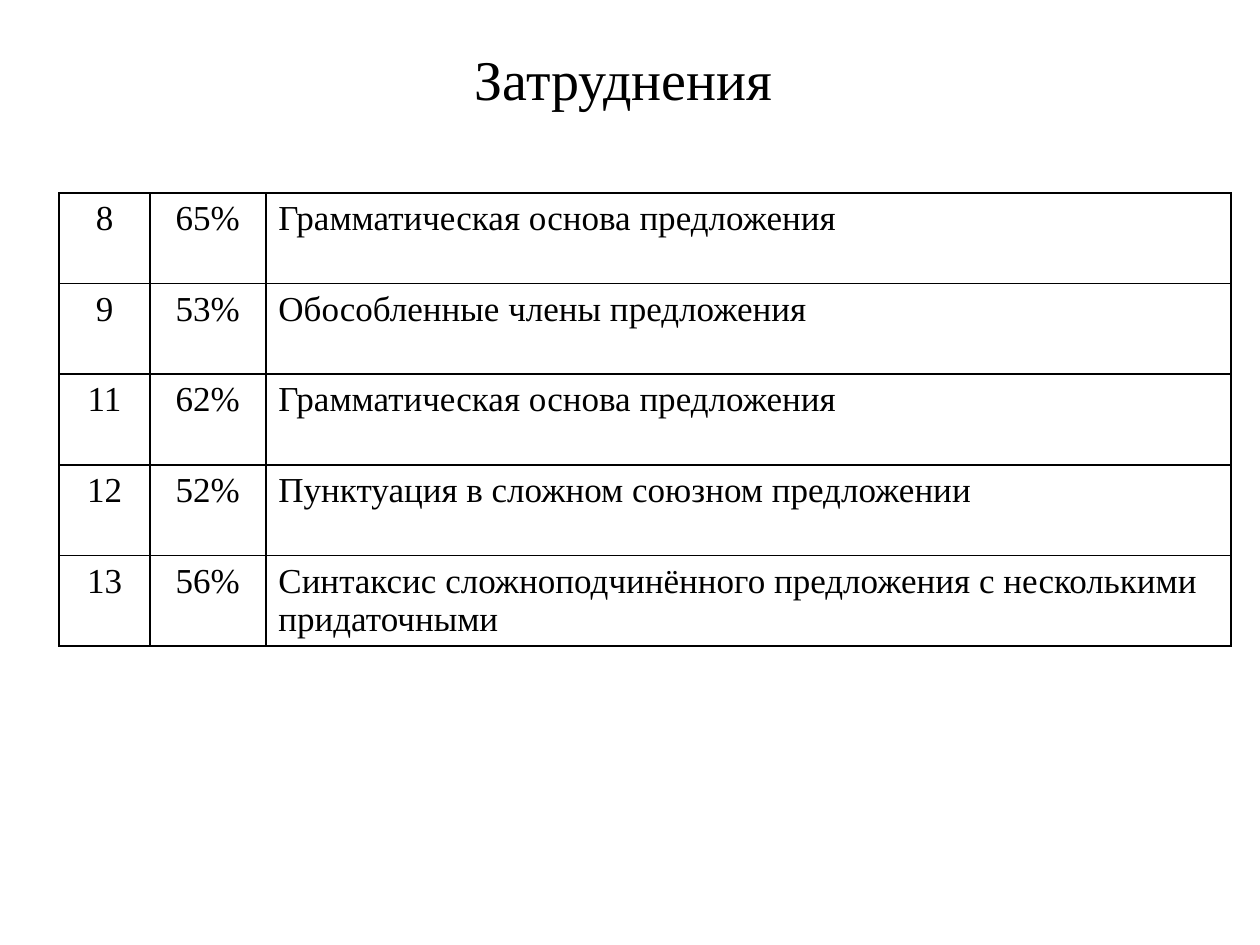
import pptx
import pptx.util
import pptx.dml.color
import pptx.enum.text
import pptx.oxml
import pptx.oxml.ns

Inch = pptx.util.Inches
Align = pptx.enum.text.PP_ALIGN
Anchor = pptx.enum.text.MSO_ANCHOR
INK = "000000"


def tint(code):
    return pptx.dml.color.RGBColor.from_string(code)


def style(par, size, align):
    par.alignment = align
    font = par.runs[0].font
    form = {"name": "Times New Roman", "size": pptx.util.Pt(size), "bold": False}
    for key, val in form.items():
        setattr(font, key, val)
    font.color.rgb = tint(INK)


deck = pptx.Presentation()
deck.slide_width, deck.slide_height = Inch(10), Inch(7.5)
slide = deck.slides.add_slide(deck.slide_layouts[5])

# Title
title = slide.shapes.title
place = {"left": 0.7, "top": 0.23, "width": 8.5, "height": 0.78}
for key, val in place.items():
    setattr(title, key, Inch(val))
title.text_frame.text = "Затруднения"
title.text_frame.vertical_anchor = Anchor.MIDDLE
style(title.text_frame.paragraphs[0], 32, Align.CENTER)

# Table of tasks: number, share, topic
rows = [
    ("8", "65%", "Грамматическая основа предложения"),
    ("9", "53%", "Обособленные члены предложения"),
    ("11", "62%", "Грамматическая основа предложения"),
    ("12", "52%", "Пунктуация в сложном союзном предложении"),
    ("13", "56%", "Синтаксис сложноподчинённого предложения с несколькими придаточными"),
]
cols = [(0.72, Align.CENTER), (0.92, Align.CENTER), (7.66, Align.LEFT)]
high = 0.72
wide = sum(width for width, _ in cols)
table = slide.shapes.add_table(
    len(rows), len(cols), Inch(0.47), Inch(1.53), Inch(wide), Inch(high * len(rows))
).table
table.first_row = table.horz_banding = False
for col, (width, _) in zip(table.columns, cols):
    col.width = Inch(width)

# Cell text and borders
space = pptx.oxml.ns.nsdecls("a")
for r, row in enumerate(rows):
    table.rows[r].height = Inch(high)
    for c, text in enumerate(row):
        cell = table.cell(r, c)
        cell.text = text
        cell.vertical_anchor = Anchor.TOP
        style(cell.text_frame.paragraphs[0], 20, cols[c][1])
        props = cell._tc.get_or_add_tcPr()
        for side in ("lnL", "lnR", "lnT", "lnB"):
            props.append(pptx.oxml.parse_xml(
                f'<a:{side} {space} w="12700"><a:solidFill>'
                f'<a:srgbClr val="{INK}"/></a:solidFill></a:{side}>'))
        cell.fill.background()

deck.save("out.pptx")
